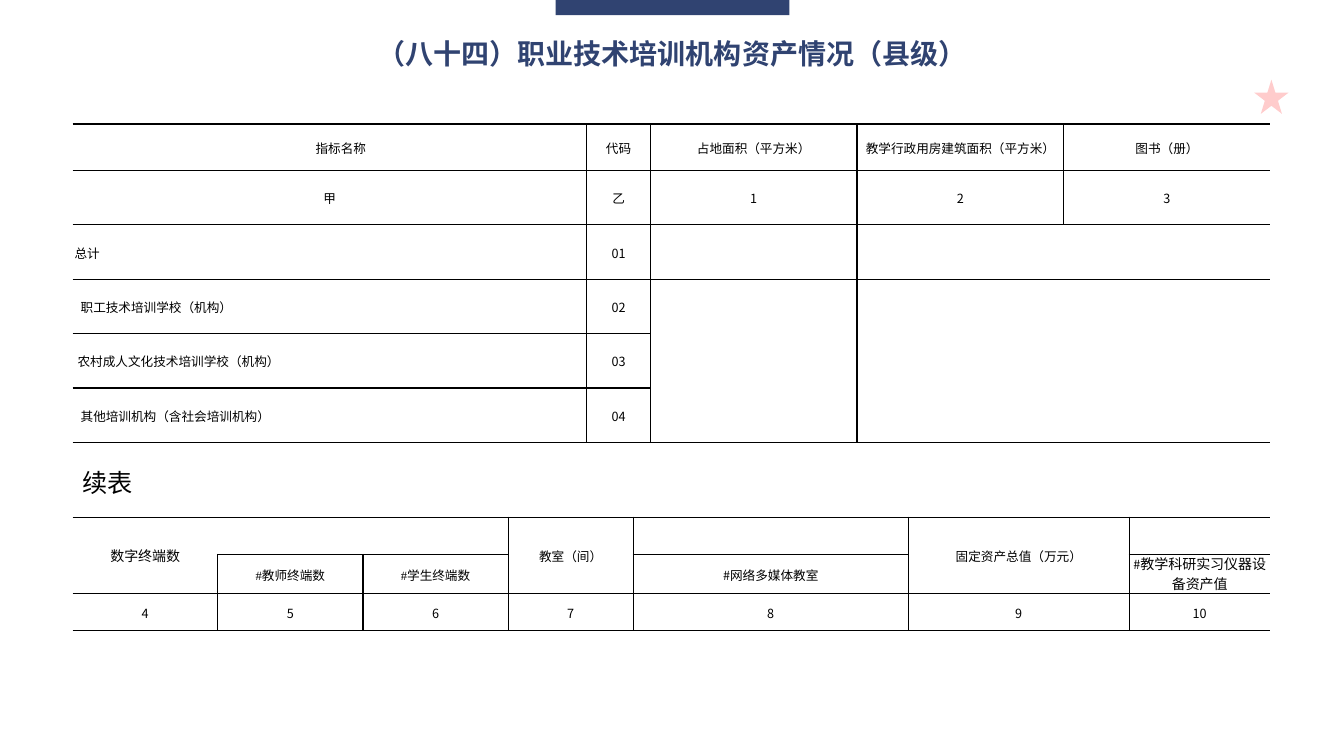
from dataclasses import dataclass

from lxml.etree import SubElement
from pptx import Presentation
from pptx.dml.color import RGBColor
from pptx.enum.shapes import MSO_SHAPE as Shape
from pptx.enum.text import MSO_ANCHOR as Anchor, MSO_AUTO_SIZE as AutoSize, PP_ALIGN as Align
from pptx.oxml.ns import qn
from pptx.util import Inches, Pt


@dataclass(frozen=True)
class Theme:
    navy: str = "304371"
    black: str = "000000"
    star: str = "FF0000"
    heading_font: str = "Arial"
    text_font: str = "Times New Roman"
    number_font: str = "Noto Sans CJK SC"
    title_size: float = 20
    subtitle_size: float = 18
    large_size: float = 10
    cell_size: float = 9
    line_pitch: float = 14
    border: float = 1
    inset: float = 0.02
    plain_table: str = "{2D5ABB26-0587-4C30-8999-92F81FD0307C}"


THEME = Theme()
BORDER_TAGS = {"l": "a:lnL", "r": "a:lnR", "t": "a:lnT", "b": "a:lnB"}


@dataclass(frozen=True)
class Ornament:
    kind: Shape
    box: tuple[float, float, float, float]
    color: str
    opacity: int = 100


@dataclass(frozen=True)
class Caption:
    text: str
    box: tuple[float, float, float, float]
    size: float
    color: str
    align: Align
    bold: bool = False
    wrap: bool = True
    pitch: float | None = None


@dataclass(frozen=True)
class Cell:
    text: str = ""
    sides: str = "lrtb"
    align: Align = Align.CENTER
    indent: float = 0
    size: float = THEME.cell_size
    marker: str = ""
    row_span: int = 1


@dataclass(frozen=True)
class Grid:
    left: float
    top: float
    columns: list[float]
    heights: list[float]
    rows: list[list[Cell]]


def label_row(texts: list[str]) -> list[Cell]:
    """A fully ruled row, open at both outer edges."""
    last = len(texts) - 1
    return [Cell(text, {0: "rtb", last: "ltb"}.get(index, "lrtb"))
            for index, text in enumerate(texts)]


def institution_row(name: str, code: str, indent: float, blank_side: str) -> list[Cell]:
    """A named row whose value area is one open field."""
    return [Cell(name, "rtb", Align.JUSTIFY, indent), Cell(code),
            Cell(sides="l" + blank_side), Cell(sides=blank_side), Cell(sides=blank_side)]


ORNAMENTS = [
    Ornament(Shape.STAR_5_POINT, (12.44, 0.79, 0.34, 0.34), THEME.star, 20),
    Ornament(Shape.RECTANGLE, (5.51, -0.01, 2.32, 0.16), THEME.navy),
]
CAPTIONS = [
    Caption("（八十四）职业技术培训机构资产情况（县级）", (3.62, 0.31, 6.09, 0.44),
            THEME.title_size, THEME.navy, Align.CENTER, bold=True, wrap=False),
    Caption("续表", (0.72, 4.69, 0.71, 0.31),
            THEME.subtitle_size, THEME.black, Align.JUSTIFY, pitch=THEME.line_pitch),
]
ASSETS = Grid(0.72, 1.23, [5.1, 0.63, 2.05, 2.05, 2.05], [0.46] + [0.54] * 5, [
    [Cell("指标名称", "rtb", indent=0.22),
     *label_row(["", "代码", "占地面积（平方米）", "教学行政用房建筑面积（平方米）", "图书（册）"])[1:]],
    label_row(["甲", "乙", "1", "2", "3"]),
    institution_row("总计", "01", 0, "t"),
    institution_row("职工技术培训学校（机构）", "02", 0.06, ""),
    institution_row("农村成人文化技术培训学校（机构）", "03", 0.03, ""),
    institution_row("其他培训机构（含社会培训机构）", "04", 0.06, "b"),
])
CONTINUATION = Grid(0.72, 5.13, [1.44, 1.44, 1.44, 1.24, 2.73, 2.19, 1.4], [0.37] * 3, [
    [Cell("数字终端数", "tb", size=THEME.large_size, row_span=2),
     Cell(sides="tb"), Cell(sides="rtb"),
     Cell("教室（间）", "ltb", row_span=2), Cell(sides="rtb"),
     Cell("固定资产总值（万元）", "ltb", row_span=2), Cell(sides="tb")],
    [Cell(sides="rb"), Cell("#教师终端数"), Cell("#学生终端数"),
     Cell(sides="lrb"), Cell("网络多媒体教室", marker="#"),
     Cell(sides="lrb"),
     Cell("教学科研实习仪器设备资产值", "ltb", size=THEME.large_size, marker="#")],
    label_row([str(number) for number in range(4, 11)]),
])


def style_font(font, name: str, size: float, color: str, bold: bool = False) -> None:
    font.name, font.size, font.bold = name, Pt(size), bold
    font.color.rgb = RGBColor.from_string(color)


def add_ornament(slide, ornament: Ornament) -> None:
    shape = slide.shapes.add_shape(ornament.kind, *map(Inches, ornament.box))
    shape.shadow.inherit = False
    shape.line.fill.background()
    shape.fill.solid()
    shape.fill.fore_color.rgb = RGBColor.from_string(ornament.color)
    if ornament.opacity < 100:
        color = shape.element.spPr.find(qn("a:solidFill"))[0]
        SubElement(color, qn("a:alpha"), val=str(ornament.opacity * 1000))


def add_caption(slide, caption: Caption) -> None:
    frame = slide.shapes.add_textbox(*map(Inches, caption.box)).text_frame
    frame.word_wrap = caption.wrap
    frame.auto_size = AutoSize.SHAPE_TO_FIT_TEXT
    paragraph = frame.paragraphs[0]
    paragraph.text, paragraph.alignment = caption.text, caption.align
    if caption.pitch:
        paragraph.line_spacing = Pt(caption.pitch)
    style_font(paragraph.font, THEME.heading_font, caption.size, caption.color, caption.bold)


def draw_borders(target, sides: str) -> None:
    properties = target._tc.get_or_add_tcPr()
    for side, tag in BORDER_TAGS.items():
        if side in sides:
            line = SubElement(properties, qn(tag), w=str(Pt(THEME.border)))
            fill = SubElement(line, qn("a:solidFill"))
            SubElement(fill, qn("a:srgbClr"), val=THEME.black)


def fill_cell(target, cell: Cell) -> None:
    target.margin_left = Inches(THEME.inset + cell.indent)
    target.margin_right = Inches(THEME.inset)
    target.margin_top = target.margin_bottom = 0
    target.vertical_anchor = Anchor.MIDDLE
    draw_borders(target, cell.sides)
    target.fill.background()
    paragraph = target.text_frame.paragraphs[0]
    paragraph.alignment, paragraph.line_spacing = cell.align, Pt(THEME.line_pitch)
    name = THEME.number_font if cell.text.isdigit() else THEME.text_font
    style_font(paragraph.font, name, cell.size, THEME.black)
    if cell.marker:
        marker = paragraph.add_run()
        marker.text = cell.marker
        style_font(marker.font, THEME.number_font, THEME.cell_size, THEME.black)
    if cell.text:
        paragraph.add_run().text = cell.text


def add_grid(slide, grid: Grid) -> None:
    frame = slide.shapes.add_table(
        len(grid.heights), len(grid.columns), Inches(grid.left), Inches(grid.top),
        Inches(sum(grid.columns)), Inches(sum(grid.heights)))
    frame.element.xpath(".//a:tableStyleId")[0].text = THEME.plain_table
    table = frame.table
    table.first_row = table.horz_banding = False
    for column, width in zip(table.columns, grid.columns):
        column.width = Inches(width)
    for row, height in zip(table.rows, grid.heights):
        row.height = Inches(height)
    for row_index, cells in enumerate(grid.rows):
        for column_index, cell in enumerate(cells):
            target = table.cell(row_index, column_index)
            fill_cell(target, cell)
            if cell.row_span > 1:
                target.merge(table.cell(row_index + cell.row_span - 1, column_index))


def main() -> None:
    presentation = Presentation()
    presentation.slide_width, presentation.slide_height = Inches(13.33), Inches(7.5)
    slide = presentation.slides.add_slide(presentation.slide_layouts[6])
    # Decorations, headings, then the two tables
    for ornament in ORNAMENTS:
        add_ornament(slide, ornament)
    for caption in CAPTIONS:
        add_caption(slide, caption)
    for grid in (ASSETS, CONTINUATION):
        add_grid(slide, grid)
    presentation.save("out.pptx")


if __name__ == "__main__":
    main()
